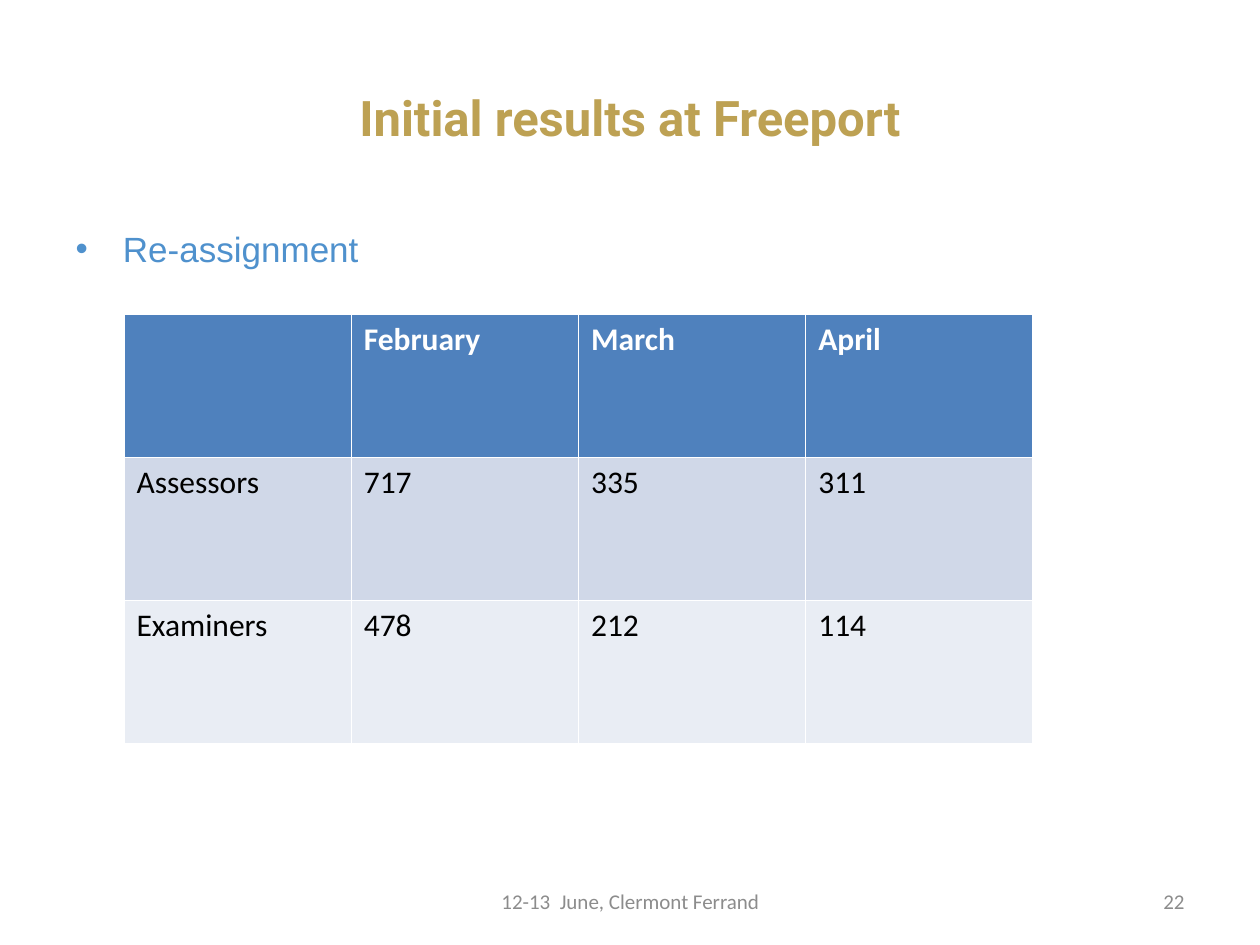
from pptx import Presentation
from pptx import util as u
from pptx.dml import color
from pptx.enum import text

COLORS = {
    "gold": "BDA153",
    "sky": "4F91CD",
    "gray": "8C8C8C",
    "white": "FFFFFF",
    "black": "000000",
    "header": "4F81BD",
    "band": "D0D8E8",
    "pale": "E9EDF4",
}
PX = u.Inches(1) / 126


def px(*lengths):
    return [round(length * PX) for length in lengths]


def write(frame, words, size, ink, font="Calibri", bold=False, align=None, anchor=None):
    frame.word_wrap = True
    if anchor is not None:
        frame.vertical_anchor = anchor
    paragraph = frame.paragraphs[0]
    paragraph.alignment = align
    run = paragraph.add_run()
    run.text = words
    run.font.size = u.Pt(size)
    run.font.name = font
    run.font.bold = bold
    run.font.color.rgb = color.RGBColor.from_string(COLORS[ink])


deck = Presentation()
deck.slide_width, deck.slide_height = px(1260, 945)
slide = deck.slides.add_slide(deck.slide_layouts[1])

heading = slide.shapes.title
heading.left, heading.top, heading.width, heading.height = px(63, 38, 1134, 158)
write(heading.text_frame, "Initial results at Freeport", size=28, ink="gold",
      font="Roboto", bold=True, align=text.PP_ALIGN.CENTER,
      anchor=text.MSO_ANCHOR.MIDDLE)

topic = slide.placeholders[1]
topic.left, topic.top, topic.width, topic.height = px(63, 221, 1134, 624)
write(topic.text_frame, "Re-assignment", size=20, ink="sky", font="Arial")

for words, left, width, align in [
    ("12-13  June, Clermont Ferrand", 431, 399, text.PP_ALIGN.CENTER),
    ("22", 903, 294, text.PP_ALIGN.RIGHT),
]:
    footer = slide.shapes.add_textbox(*px(left, 876, width, 50))
    write(footer.text_frame, words, size=12, ink="gray", align=align,
          anchor=text.MSO_ANCHOR.MIDDLE)

reassignments = [
    ("", "February", "March", "April"),
    ("Assessors", "717", "335", "311"),
    ("Examiners", "478", "212", "114"),
]
row_fills = ["header", "band", "pale"]
results = slide.shapes.add_table(3, 4, *px(124, 314, 909, 430)).table

for r, (values, fill) in enumerate(zip(reassignments, row_fills)):
    for c, value in enumerate(values):
        cell = results.cell(r, c)
        cell.fill.solid()
        cell.fill.fore_color.rgb = color.RGBColor.from_string(COLORS[fill])
        if value:
            write(cell.text_frame, value, size=18,
                  ink="white" if r == 0 else "black", bold=r == 0)

deck.save("out.pptx")
